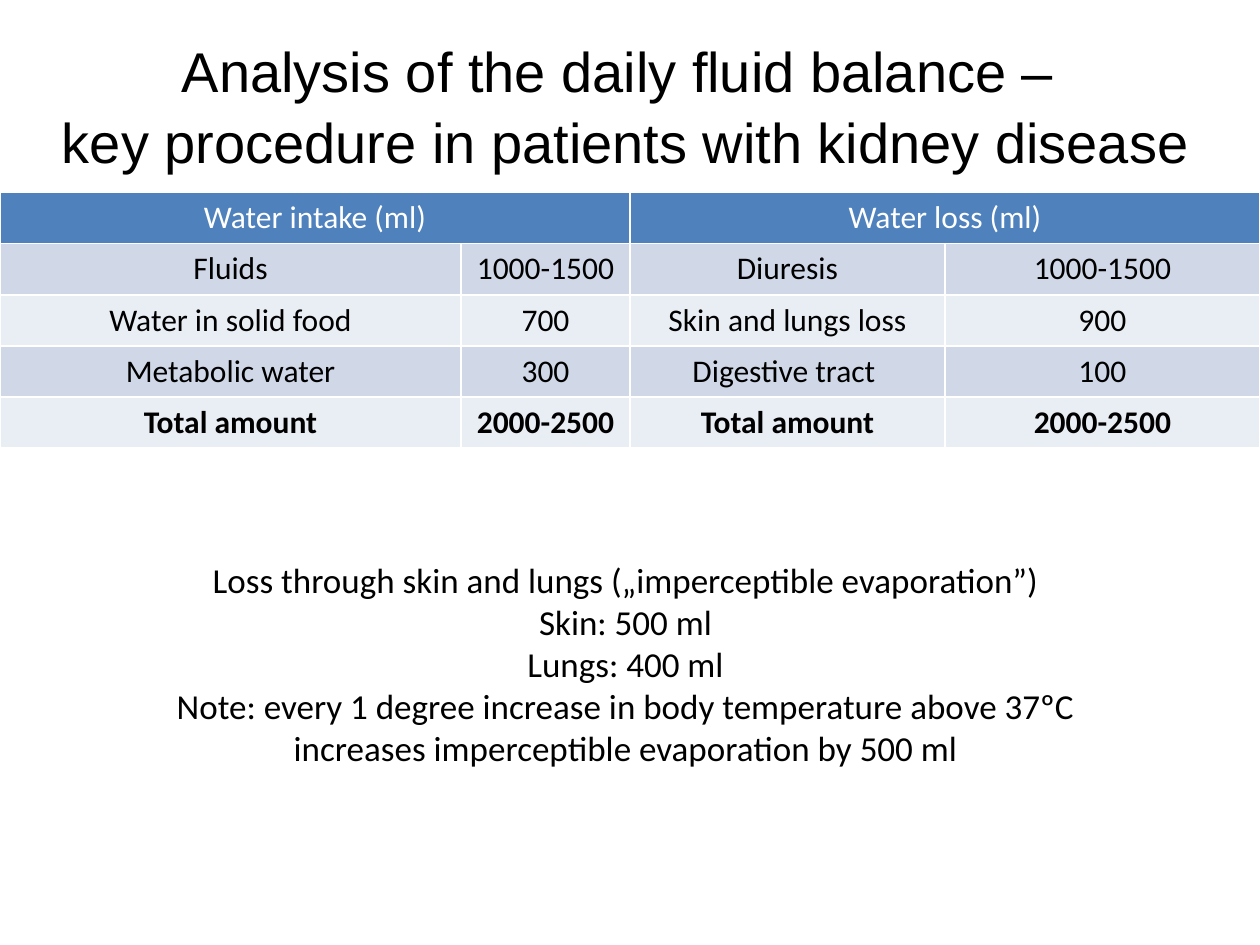
"""Build a slide on the daily fluid balance in patients with kidney disease."""
from pptx import Presentation
from pptx.dml.color import RGBColor
from pptx.enum.text import MSO_ANCHOR, MSO_AUTO_SIZE, PP_ALIGN
from pptx.util import Pt

BLACK = RGBColor(0x00, 0x00, 0x00)
WHITE = RGBColor(0xFF, 0xFF, 0xFF)
HEADER_BLUE = RGBColor(0x4F, 0x81, 0xBD)
BAND_DARK = RGBColor(0xD0, 0xD8, 0xE8)
BAND_LIGHT = RGBColor(0xE9, 0xED, 0xF4)

TITLE_LINES = [
    "Analysis of the daily fluid balance – ",
    "key procedure in patients with kidney disease",
]
BALANCE_ROWS = [
    ["Water intake (ml)", "", "Water loss (ml)", ""],
    ["Fluids", "1000-1500", "Diuresis", "1000-1500"],
    ["Water in solid food", "700", "Skin and lungs loss", "900"],
    ["Metabolic water", "300", "Digestive tract ", "100"],
    ["Total amount", "2000-2500", "Total amount", "2000-2500"],
]
COLUMN_WIDTHS = [263.5, 96.5, 180, 180]
ROW_HEIGHT = 29.25
EVAPORATION_LINES = [
    "Loss through skin and lungs („imperceptible evaporation”)",
    "Skin: 500 ml",
    "Lungs: 400 ml",
    "Note: every 1 degree increase in body temperature above 37ºC",
    "increases imperceptible evaporation by 500 ml",
]


def format_paragraph(paragraph, name, size, color, bold=False):
    paragraph.alignment = PP_ALIGN.CENTER
    font = paragraph.font
    font.name, font.size, font.bold = name, Pt(size), bold
    font.color.rgb = color


presentation = Presentation()
presentation.slide_width, presentation.slide_height = Pt(720), Pt(540)
slide = presentation.slides.add_slide(presentation.slide_layouts[5])

title = slide.shapes.title
title.left, title.top, title.width, title.height = Pt(33), Pt(20), Pt(649.5), Pt(78)
title_frame = title.text_frame
title_frame.margin_left = title_frame.margin_right = 0
title_frame.margin_top = title_frame.margin_bottom = 0
title_frame.word_wrap = False
title_frame.auto_size = MSO_AUTO_SIZE.SHAPE_TO_FIT_TEXT
title_frame.vertical_anchor = MSO_ANCHOR.MIDDLE
title_frame.text = "\n".join(TITLE_LINES)
for paragraph in title_frame.paragraphs:
    format_paragraph(paragraph, "Arial", 32, BLACK)
    paragraph.line_spacing = 1.06

balance_table = slide.shapes.add_table(
    len(BALANCE_ROWS), len(COLUMN_WIDTHS),
    Pt(0), Pt(110), Pt(sum(COLUMN_WIDTHS)), Pt(ROW_HEIGHT * len(BALANCE_ROWS)),
).table
for column, width in zip(balance_table.columns, COLUMN_WIDTHS):
    column.width = Pt(width)
for row_index, row_texts in enumerate(BALANCE_ROWS):
    is_header = row_index == 0
    is_total = row_index == len(BALANCE_ROWS) - 1
    band = BAND_DARK if row_index % 2 else BAND_LIGHT
    for column_index, text in enumerate(row_texts):
        cell = balance_table.cell(row_index, column_index)
        cell.fill.solid()
        cell.fill.fore_color.rgb = HEADER_BLUE if is_header else band
        cell.text = text
        format_paragraph(cell.text_frame.paragraphs[0], "Calibri", 18,
                         WHITE if is_header else BLACK, is_total)
for first_column in (0, 2):
    balance_table.cell(0, first_column).merge(balance_table.cell(0, first_column + 1))

evaporation_box = slide.shapes.add_textbox(Pt(54.5), Pt(315.5), Pt(606), Pt(128))
evaporation_frame = evaporation_box.text_frame
evaporation_frame.word_wrap = True
evaporation_frame.auto_size = MSO_AUTO_SIZE.SHAPE_TO_FIT_TEXT
evaporation_paragraph = evaporation_frame.paragraphs[0]
evaporation_paragraph.text = "\v".join(EVAPORATION_LINES)
format_paragraph(evaporation_paragraph, "Calibri", 20, BLACK)

presentation.save("out.pptx")
